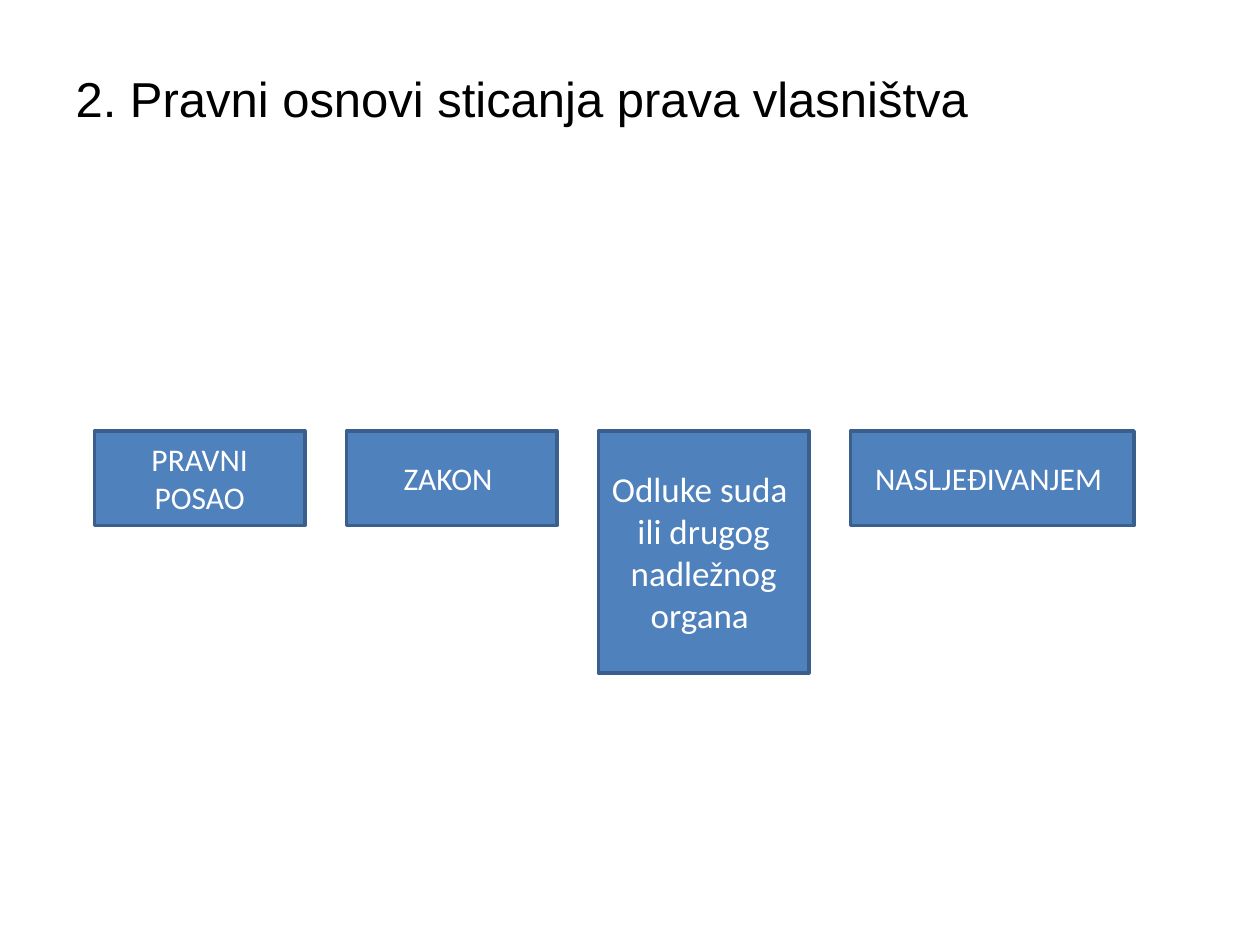
from dataclasses import dataclass

from pptx import Presentation
from pptx import util as u
from pptx.dml.color import RGBColor
from pptx.enum import shapes, text


@dataclass
class Basis:
    label: str
    width: float = 1.67
    height: float = 0.75
    size: int = 18


BASES = [
    Basis("PRAVNI POSAO"),
    Basis("ZAKON "),
    Basis("Odluke suda  ili drugog nadležnog organa ", height=1.92, size=20),
    Basis("NASLJEĐIVANJEM ", width=2.25),
]
LEFT, TOP, STEP = 0.75, 3.42, 2


def color(value: str) -> RGBColor:
    return RGBColor.from_string(value)


def style_text(tf, font: str, size: int, fill: str, align) -> None:
    tf.word_wrap = True
    tf.vertical_anchor = text.MSO_ANCHOR.MIDDLE
    p = tf.paragraphs[0]
    p.alignment = align
    for r in p.runs:
        r.font.name = font
        r.font.size = u.Pt(size)
        r.font.color.rgb = color(fill)


def add_title(s, title: str) -> None:
    sp = s.shapes.title
    sp.left, sp.top = u.Inches(0.5), u.Inches(0.3)
    sp.width, sp.height = u.Inches(9), u.Inches(0.95)
    sp.text_frame.text = title
    style_text(sp.text_frame, "Arial", 28, "000000", text.PP_ALIGN.LEFT)


def add_basis(s, basis: Basis, left: float) -> None:
    sp = s.shapes.add_shape(
        shapes.MSO_SHAPE.RECTANGLE,
        u.Inches(left), u.Inches(TOP),
        u.Inches(basis.width), u.Inches(basis.height),
    )
    sp.shadow.inherit = False
    sp.fill.solid()
    sp.fill.fore_color.rgb = color("4F81BD")
    sp.line.color.rgb = color("3A5F8C")
    sp.line.width = u.Pt(2)
    sp.text_frame.text = basis.label
    style_text(sp.text_frame, "Calibri", basis.size, "FFFFFF", text.PP_ALIGN.CENTER)


def main() -> None:
    prs = Presentation()
    prs.slide_width, prs.slide_height = u.Inches(10), u.Inches(7.5)
    s = prs.slides.add_slide(prs.slide_layouts[5])
    add_title(s, "2. Pravni osnovi sticanja prava vlasništva")
    for i, basis in enumerate(BASES):
        add_basis(s, basis, LEFT + i * STEP)
    prs.save("out.pptx")


if __name__ == "__main__":
    main()
